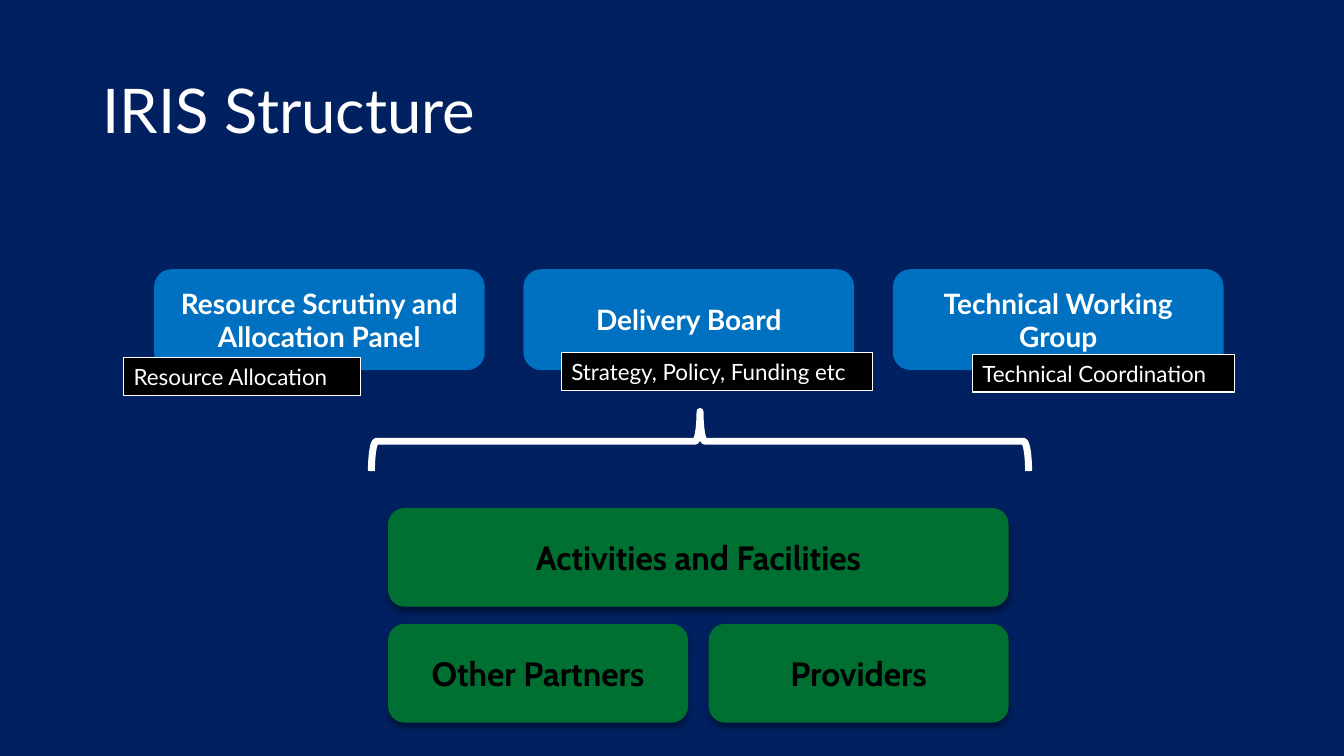
from lxml import etree
from pptx import Presentation
from pptx.dml.color import RGBColor
from pptx.enum.shapes import MSO_SHAPE
from pptx.enum.text import MSO_ANCHOR, MSO_AUTO_SIZE, PP_ALIGN
from pptx.oxml import parse_xml
from pptx.oxml.ns import qn
from pptx.util import Cm, Pt

ROUNDED = MSO_SHAPE.ROUNDED_RECTANGLE
RECT = MSO_SHAPE.RECTANGLE
BRACE = MSO_SHAPE.LEFT_BRACE
MIDDLE, TOP = MSO_ANCHOR.MIDDLE, MSO_ANCHOR.TOP
LEFT, CENTER = PP_ALIGN.LEFT, PP_ALIGN.CENTER
GROW = MSO_AUTO_SIZE.SHAPE_TO_FIT_TEXT

COLORS = {"navy": "002060", "blue": "0070C0", "green": "006F32",
          "black": "000000", "white": "FFFFFF"}

SHADOW = (
    '<a:outerShdw xmlns:a="http://schemas.openxmlformats.org/drawingml/2006/main"'
    ' blurRad="50800" dist="38100" dir="5400000" rotWithShape="0">'
    '<a:srgbClr val="000000"><a:alpha val="40000"/></a:srgbClr></a:outerShdw>')


def rgb(name):
    return RGBColor.from_string(COLORS[name])


def write(sp, text, size, font="Lato", color="white", bold=False,
          align=LEFT, anchor=MIDDLE, spacing=None):
    tf = sp.text_frame
    tf.word_wrap = True
    tf.vertical_anchor = anchor
    p = tf.paragraphs[0]
    p.alignment = align
    if spacing:
        p.line_spacing = spacing
    r = p.add_run()
    r.text = text
    r.font.name = font
    r.font.size = Pt(size)
    r.font.bold = bold
    r.font.color.rgb = rgb(color)


def add_shape(s, kind, x, y, w, h, fill=None, line=None, weight=1):
    """Add a shape without shadow; a missing fill or line is left out."""
    sp = s.shapes.add_shape(kind, Cm(x), Cm(y), Cm(w), Cm(h))
    sp.shadow.inherit = False
    if fill:
        sp.fill.solid()
        sp.fill.fore_color.rgb = rgb(fill)
    else:
        sp.fill.background()
    if line:
        sp.line.color.rgb = rgb(line)
        sp.line.width = Pt(weight)
    else:
        sp.line.fill.background()
    return sp


def add_title(s, text):
    sp = s.shapes.add_textbox(Cm(2.34), Cm(1.02), Cm(23.88), Cm(3.68))
    write(sp, text, 44, spacing=0.9)


def add_unit(s, text, x, y, w):
    """Add a green box with a soft shadow below it."""
    sp = add_shape(s, ROUNDED, x, y, w, 2.49, fill="green")
    effects = sp._element.spPr.find(qn("a:effectLst"))
    effects.append(parse_xml(etree.tostring(etree.fromstring(SHADOW))))
    write(sp, text, 24, font="Cabin", color="black", bold=True, align=CENTER)


def add_board(s, text, x, y):
    sp = add_shape(s, ROUNDED, x, y, 8.28, 2.49, "blue", "blue", 1.5)
    write(sp, text, 20, bold=True, align=CENTER)


def add_role(s, text, x, y, w):
    sp = add_shape(s, RECT, x, y, w, 0.94, "black", "white", 0.75)
    write(sp, text, 16, anchor=TOP)
    sp.text_frame.auto_size = GROW


def add_brace(s):
    sp = add_shape(s, BRACE, 16.89, 2.84, 1.5, 16.56, line="white", weight=5)
    sp.rotation = 90


def main():
    prs = Presentation()
    prs.slide_width, prs.slide_height = Cm(33.87), Cm(19.05)
    s = prs.slides.add_slide(prs.slide_layouts[6])
    s.background.fill.solid()
    s.background.fill.fore_color.rgb = rgb("navy")

    add_title(s, "IRIS Structure")

    unit_x, unit_w, unit_gap = 9.78, 7.56, 0.52
    add_unit(s, "Activities and Facilities", unit_x, 12.8, 2 * unit_w + unit_gap)
    for i, text in enumerate(("Other Partners", "Providers")):
        add_unit(s, text, unit_x + i * (unit_w + unit_gap), 15.72, unit_w)

    boards = ("Resource Scrutiny and Allocation Panel", "Delivery Board",
              "Technical Working Group")
    for i, text in enumerate(boards):
        add_board(s, text, 3.91 + i * 9.31, 6.81)

    add_brace(s)

    roles = (("Resource Allocation", 3.12, 9.02, 5.97),
             ("Strategy, Policy, Funding etc", 14.15, 8.89, 7.85),
             ("Technical Coordination", 24.51, 8.94, 6.6))
    for role in roles:
        add_role(s, *role)

    prs.save("out.pptx")


if __name__ == "__main__":
    main()
